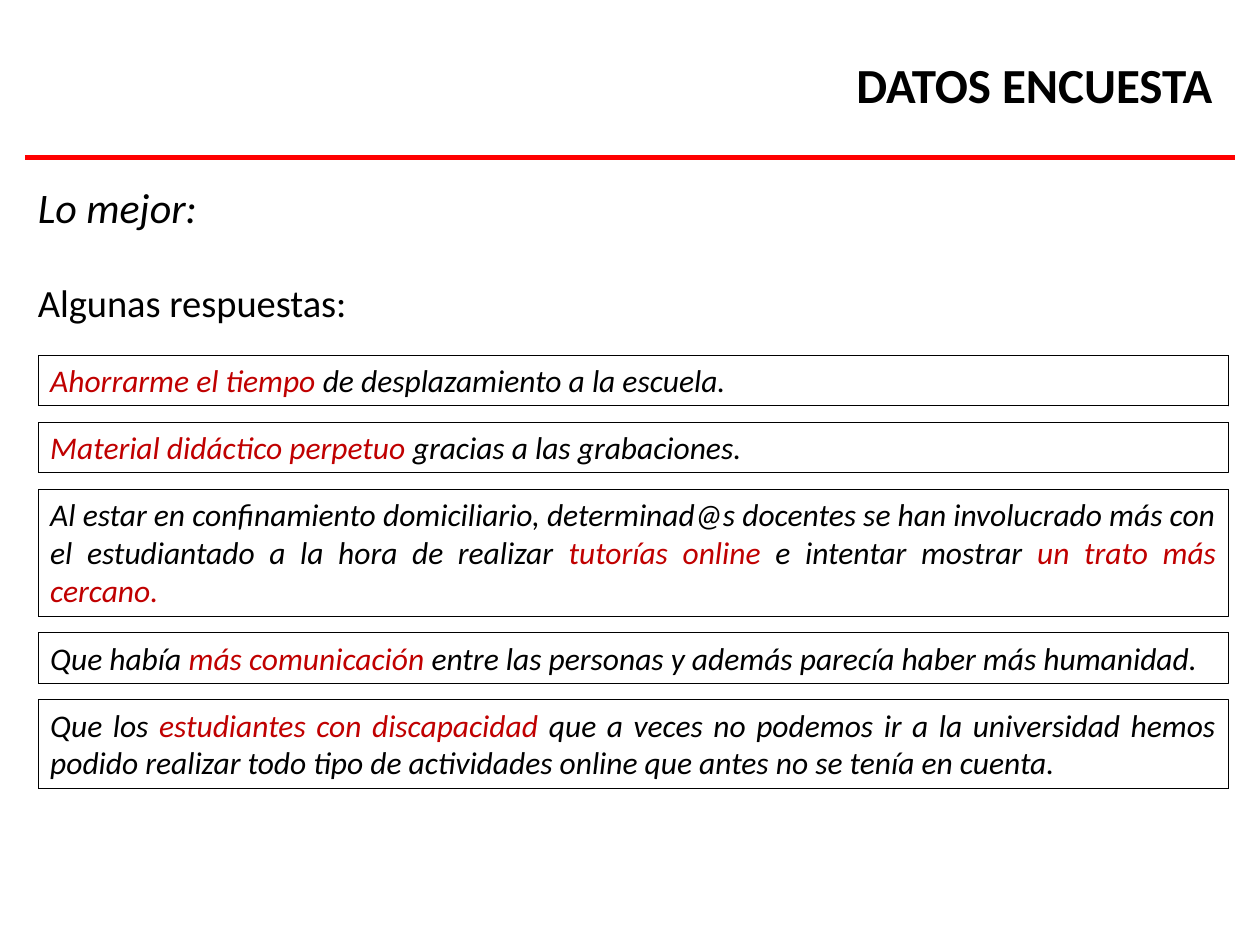
import pptx
import pptx.dml.color
import pptx.enum.dml
import pptx.enum.shapes
import pptx.enum.text
import pptx.util
from pptx.util import Inches

BLACK = pptx.dml.color.RGBColor(0x00, 0x00, 0x00)
RED = pptx.dml.color.RGBColor(0xFF, 0x00, 0x00)
DARK_RED = pptx.dml.color.RGBColor(0xC0, 0x00, 0x00)


def format_font(font, size, color=BLACK, bold=False, italic=False):
    font.name = "Calibri"
    font.size = pptx.util.Pt(size)
    font.bold = bold
    font.italic = italic
    font.color.rgb = color


def place(shape, left, top, width, height):
    shape.left, shape.top = Inches(left), Inches(top)
    shape.width, shape.height = Inches(width), Inches(height)


presentation = pptx.Presentation()
presentation.slide_width = Inches(10)
presentation.slide_height = Inches(7.5)
slide = presentation.slides.add_slide(presentation.slide_layouts[1])

# Title
title = slide.shapes.title
place(title, 3.07, 0.04, 6.65, 1.25)
title.text_frame.text = "DATOS ENCUESTA"
title.text_frame.auto_size = pptx.enum.text.MSO_AUTO_SIZE.NONE
title.text_frame.vertical_anchor = pptx.enum.text.MSO_ANCHOR.MIDDLE
paragraph = title.text_frame.paragraphs[0]
paragraph.alignment = pptx.enum.text.PP_ALIGN.RIGHT
format_font(paragraph.runs[0].font, 28, bold=True)

# Rule under the title
rule = slide.shapes.add_connector(
    pptx.enum.shapes.MSO_CONNECTOR.STRAIGHT,
    Inches(0.2), Inches(1.25), Inches(9.8), Inches(1.25))
rule.line.color.rgb = RED
rule.line.width = pptx.util.Pt(3)
rule._element.spPr.append(pptx.oxml.xmlchemy.OxmlElement("a:effectLst"))

# Headings: text, size, italic, space before
headings = [
    ("Lo mejor:", 24, True, 0),
    ("Algunas respuestas:", 22, False, 27),
]
body = slide.placeholders[1]
place(body, 0.2, 1.39, 9.55, 4.96)
body.text_frame.text = "\n".join(heading[0] for heading in headings)
body.text_frame.auto_size = pptx.enum.text.MSO_AUTO_SIZE.NONE
for paragraph, (_, size, italic, space) in zip(body.text_frame.paragraphs, headings):
    properties = paragraph._p.get_or_add_pPr()
    properties.set("marL", "0")
    properties.set("indent", "0")
    properties.append(pptx.oxml.xmlchemy.OxmlElement("a:buNone"))
    paragraph.space_before = pptx.util.Pt(space)
    format_font(paragraph.runs[0].font, size, italic=italic)

# Answers: box height, then text pieces with their colours
answers = [
    (0.4, [("Ahorrarme el tiempo ", DARK_RED),
           ("de desplazamiento a la escuela.", BLACK)]),
    (0.4, [("Material didáctico perpetuo ", DARK_RED),
           ("gracias a las grabaciones.", BLACK)]),
    (1.01, [("Al estar en confinamiento domiciliario, determinad@s docentes se han "
             "involucrado más con el estudiantado a la hora de realizar ", BLACK),
            ("tutorías online ", DARK_RED),
            ("e intentar mostrar ", BLACK),
            ("un trato más cercano.", DARK_RED)]),
    (0.4, [("Que había ", BLACK),
           ("más comunicación ", DARK_RED),
           ("entre las personas y además parecía haber más humanidad.", BLACK)]),
    (0.71, [("Que los ", BLACK),
            ("estudiantes con discapacidad ", DARK_RED),
            ("que a veces no podemos ir a la universidad hemos podido realizar todo "
             "tipo de actividades online que antes no se tenía en cuenta.", BLACK)]),
]
GAP = 0.13
top = 2.82
for height, pieces in answers:
    box = slide.shapes.add_shape(
        pptx.enum.shapes.MSO_SHAPE.RECTANGLE,
        Inches(0.3), Inches(top), Inches(9.45), Inches(height))
    box.shadow.inherit = False
    box.fill.background()
    box.line.color.rgb = BLACK
    box.line.width = pptx.util.Pt(0.25)
    box.line.dash_style = pptx.enum.dml.MSO_LINE.ROUND_DOT
    box.text_frame.word_wrap = True
    box.text_frame.auto_size = pptx.enum.text.MSO_AUTO_SIZE.SHAPE_TO_FIT_TEXT
    box.text_frame.vertical_anchor = pptx.enum.text.MSO_ANCHOR.TOP
    paragraph = box.text_frame.paragraphs[0]
    paragraph.alignment = pptx.enum.text.PP_ALIGN.JUSTIFY
    for text, color in pieces:
        run = paragraph.add_run()
        run.text = text
        format_font(run.font, 18, color, italic=True)
    top += height + GAP

presentation.save("out.pptx")
